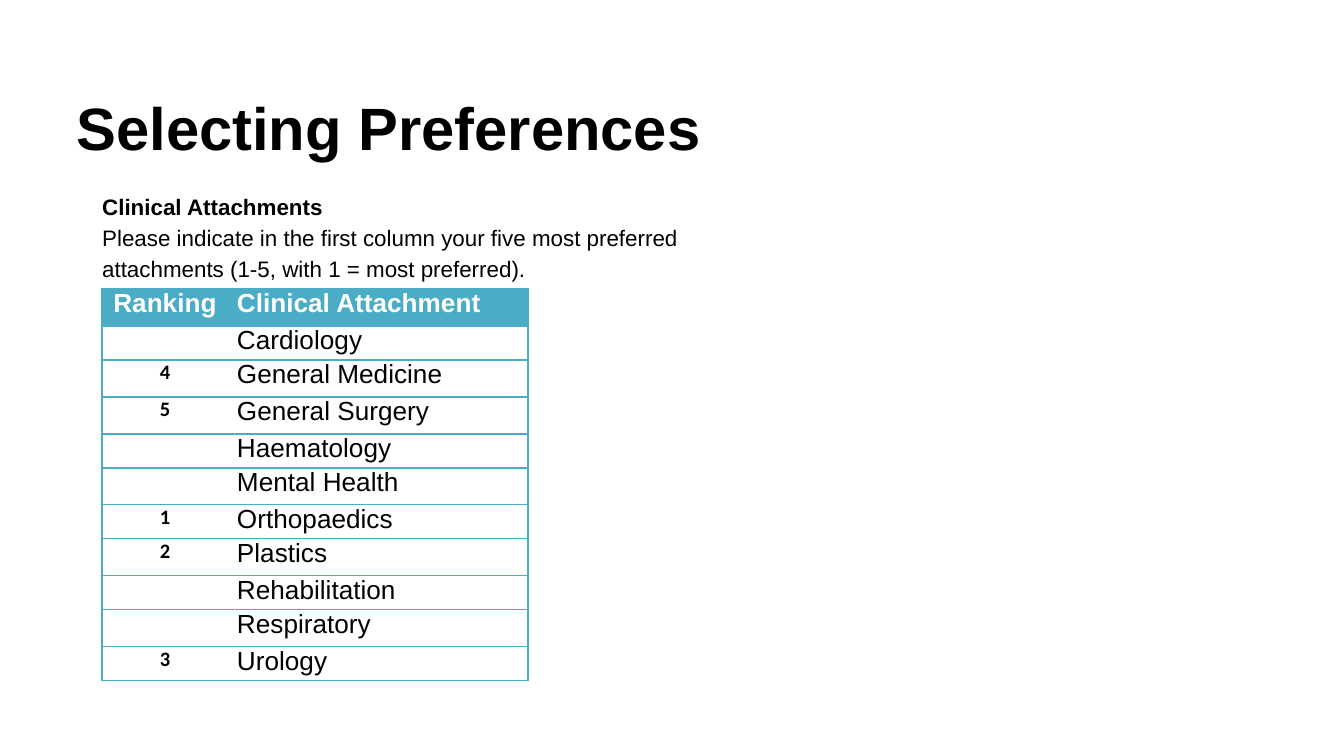
from dataclasses import dataclass

from lxml.etree import SubElement
from pptx import Presentation
from pptx.dml.color import RGBColor
from pptx.enum.text import MSO_ANCHOR, MSO_AUTO_SIZE, PP_ALIGN
from pptx.oxml.ns import qn
from pptx.util import Emu, Pt

WIDE, HIGH = 1344, 756
SCALE = 9144000 / WIDE
COLORS = {"black": "000000", "white": "FFFFFF", "teal": "4BACC6"}
PLAIN = "{2D5ABB26-0587-4C30-8999-92F81FD0307C}"
COLS = (126, 300)
TALL, LOW = 37, 34
LOW_ROWS = (1, 4, 6, 8, 10)


@dataclass(frozen=True)
class Look:
    size: int
    bold: bool = False
    color: str = "black"
    face: str = "Arial"


@dataclass(frozen=True)
class Entry:
    rank: str
    name: str


HEAD = Look(14, True, "white")
RANK = Look(11, True, face="Calibri")
NAME = Look(14)

ENTRIES = (
    Entry("Ranking", "Clinical Attachment"),
    Entry("", "Cardiology"),
    Entry("4", "General Medicine"),
    Entry("5", "General Surgery"),
    Entry("", "Haematology"),
    Entry("", "Mental Health"),
    Entry("1", "Orthopaedics"),
    Entry("2", "Plastics"),
    Entry("", "Rehabilitation"),
    Entry("", "Respiratory"),
    Entry("3", "Urology"),
)


def px(count: int) -> Emu:
    return Emu(round(count * SCALE))


def place(shape, left: int, top: int, width: int, height: int) -> None:
    shape.left, shape.top = px(left), px(top)
    shape.width, shape.height = px(width), px(height)


def style(para, look: Look) -> None:
    for run in para.runs:
        font = run.font
        font.name, font.size, font.bold = look.face, Pt(look.size), look.bold
        font.color.rgb = RGBColor.from_string(COLORS[look.color])
    if not para.runs:
        SubElement(para._p, qn("a:endParaRPr"), sz=str(look.size * 100))


def border(cell, sides: str) -> None:
    props = cell._tc.get_or_add_tcPr()
    for side in "LRTB":
        shown = side in sides
        line = SubElement(props, qn(f"a:ln{side}"), w=str(Pt(0.75) if shown else 0))
        if shown:
            fill = SubElement(line, qn("a:solidFill"))
            SubElement(fill, qn("a:srgbClr"), val=COLORS["teal"])
        else:
            SubElement(line, qn("a:noFill"))


def fill_cell(cell, text: str, look: Look, first: bool, head: bool) -> None:
    cell.margin_left = cell.margin_right = px(9)
    cell.margin_top = cell.margin_bottom = 0
    cell.vertical_anchor = MSO_ANCHOR.TOP
    border(cell, "LTB" if first else "RTB")
    if head:
        cell.fill.solid()
        cell.fill.fore_color.rgb = RGBColor.from_string(COLORS["teal"])
    else:
        cell.fill.background()
    cell.text_frame.text = text
    para = cell.text_frame.paragraphs[0]
    para.alignment = PP_ALIGN.CENTER if first else PP_ALIGN.LEFT
    style(para, look)


def add_title(slide) -> None:
    title = slide.shapes.title
    place(title, 63, 79, 1218, 95)
    frame = title.text_frame
    frame.text = "Selecting Preferences"
    frame.auto_size = MSO_AUTO_SIZE.NONE
    frame.vertical_anchor = MSO_ANCHOR.MIDDLE
    frame.paragraphs[0].alignment = PP_ALIGN.LEFT
    style(frame.paragraphs[0], Look(32, True))


def add_ranks(slide) -> None:
    heights = [LOW if row in LOW_ROWS else TALL for row in range(len(ENTRIES))]
    shape = slide.shapes.add_table(
        len(ENTRIES), len(COLS), px(102), px(289), px(sum(COLS)), px(sum(heights))
    )
    table = shape.table
    table.horz_banding = False
    table._tbl.tblPr.find(qn("a:tableStyleId")).text = PLAIN
    for col, width in zip(table.columns, COLS):
        col.width = px(width)
    for index, (entry, height) in enumerate(zip(ENTRIES, heights)):
        table.rows[index].height = px(height)
        head = index == 0
        fill_cell(table.cell(index, 0), entry.rank, HEAD if head else RANK, True, head)
        fill_cell(table.cell(index, 1), entry.name, HEAD if head else NAME, False, head)


def add_guide(slide) -> None:
    box = slide.shapes.add_textbox(px(89), px(183), px(672), px(107))
    frame = box.text_frame
    frame.word_wrap = True
    frame.auto_size = MSO_AUTO_SIZE.SHAPE_TO_FIT_TEXT
    frame.text = (
        "Clinical Attachments\n"
        "Please indicate in the first column your five most preferred "
        "attachments (1-5, with 1 = most preferred)."
    )
    for para, bold in zip(frame.paragraphs, (True, False)):
        para.line_spacing = 1.15
        style(para, Look(12, bold))


def main() -> None:
    deck = Presentation()
    deck.slide_width, deck.slide_height = px(WIDE), px(HIGH)
    slide = deck.slides.add_slide(deck.slide_layouts[5])
    add_title(slide)
    add_ranks(slide)
    add_guide(slide)
    deck.save("out.pptx")


if __name__ == "__main__":
    main()
